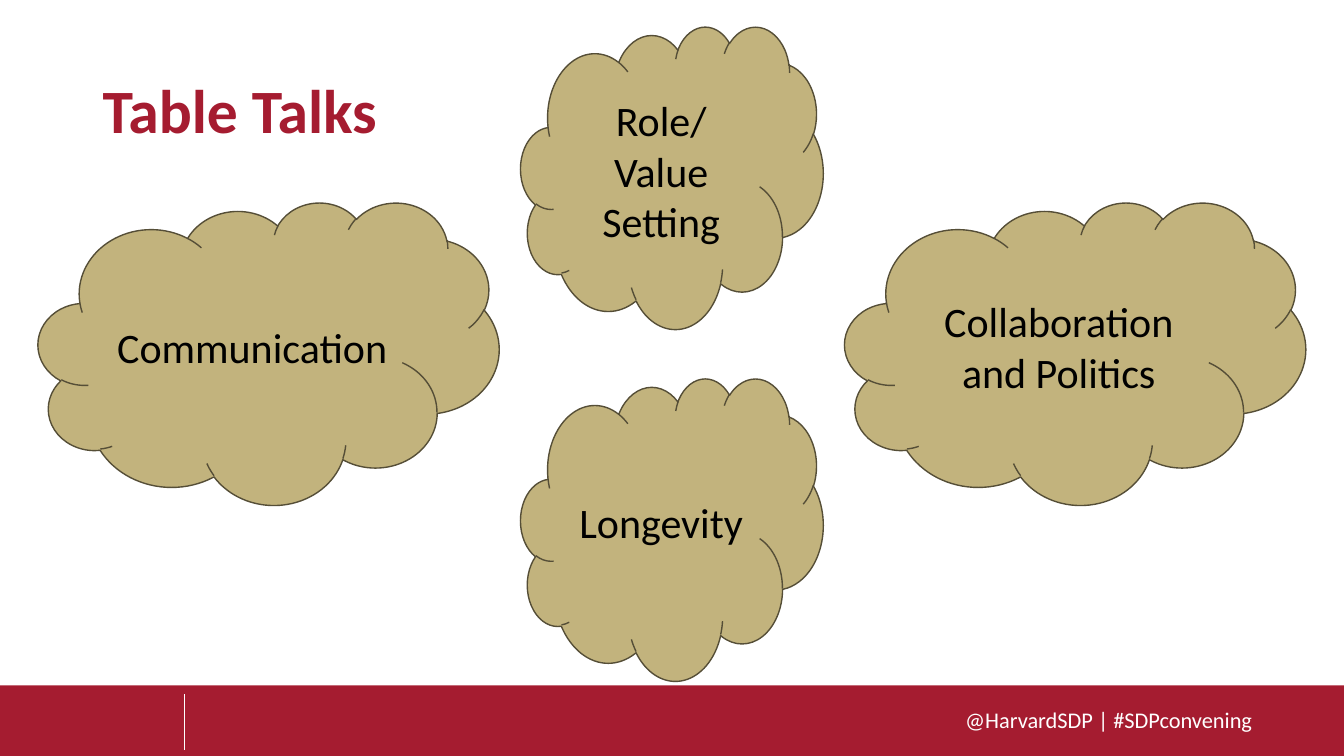
from dataclasses import dataclass

import pptx
import pptx.dml.color
import pptx.enum.shapes
import pptx.enum.text
import pptx.oxml
import pptx.oxml.ns
import pptx.util

Inches = pptx.util.Inches
Pt = pptx.util.Pt
RGBColor = pptx.dml.color.RGBColor
MSO_SHAPE = pptx.enum.shapes.MSO_SHAPE
MSO_CONNECTOR = pptx.enum.shapes.MSO_CONNECTOR
MSO_ANCHOR = pptx.enum.text.MSO_ANCHOR
PP_ALIGN = pptx.enum.text.PP_ALIGN


@dataclass(frozen=True)
class Theme:
    font: str = "Calibri"
    crimson: RGBColor = RGBColor(0xA5, 0x1C, 0x30)
    white: RGBColor = RGBColor(0xFF, 0xFF, 0xFF)
    black: RGBColor = RGBColor(0, 0, 0)
    sand: RGBColor = RGBColor(0xC2, 0xB3, 0x7D)
    outline: RGBColor = RGBColor(0x55, 0x4E, 0x37)
    title_size: int = 44
    cloud_size: int = 30
    footer_size: int = 16


THEME = Theme()
SLIDE_W, SLIDE_H = 13.33, 7.5


def write(shape, lines, size, color, align, bold=False):
    """Put one paragraph per line into the shape, vertically centred."""
    tf = shape.text_frame
    tf.word_wrap = True
    tf.vertical_anchor = MSO_ANCHOR.MIDDLE
    tf.text = "\n".join(lines)
    for p in tf.paragraphs:
        p.alignment = align
        for r in p.runs:
            r.font.name = THEME.font
            r.font.size = Pt(size)
            r.font.bold = bold
            r.font.color.rgb = color


def add_footer(slide, left, top, width, height):
    band = slide.shapes.add_shape(
        MSO_SHAPE.RECTANGLE, Inches(left), Inches(top), Inches(width), Inches(height))
    band.shadow.inherit = False
    band.fill.solid()
    band.fill.fore_color.rgb = THEME.crimson
    band.line.fill.background()

    tags = slide.shapes.add_textbox(
        Inches(left + 8.39), Inches(top + 0.15), Inches(4.03), Inches(0.37))
    tags.text_frame.margin_right = 0
    write(tags, ["@HarvardSDP | #SDPconvening"], THEME.footer_size, THEME.white, PP_ALIGN.RIGHT)

    divider_x = Inches(left + 1.83)
    divider = slide.shapes.add_connector(
        MSO_CONNECTOR.STRAIGHT, divider_x, Inches(top + 0.09), divider_x, Inches(top + 0.64))
    divider.line.color.rgb = THEME.white
    divider.line.width = Pt(0.5)
    effects = pptx.oxml.parse_xml(f"<a:effectLst {pptx.oxml.ns.nsdecls('a')}/>")
    divider._element.spPr.append(effects)


def add_title(slide, left, top, width, height, text):
    title = slide.shapes.add_textbox(Inches(left), Inches(top), Inches(width), Inches(height))
    write(title, [text], THEME.title_size, THEME.crimson, PP_ALIGN.LEFT, bold=True)
    title.text_frame.paragraphs[0].line_spacing = 0.9


def add_cloud(slide, left, top, width, height, lines):
    cloud = slide.shapes.add_shape(
        MSO_SHAPE.CLOUD, Inches(left), Inches(top), Inches(width), Inches(height))
    cloud.shadow.inherit = False
    cloud.fill.solid()
    cloud.fill.fore_color.rgb = THEME.sand
    cloud.line.color.rgb = THEME.outline
    cloud.line.width = Pt(1)
    write(cloud, lines, THEME.cloud_size, THEME.black, PP_ALIGN.CENTER)


def add_topic_clouds(slide, left, top, width, height):
    """Narrow clouds above and below the centre, wide ones at either side."""
    size, wide = 3, 4.57
    center_x = left + (width - size) / 2
    middle_y = top + (height - size) / 2
    add_cloud(slide, center_x, top + height - size, size, size, ["Longevity"])
    add_cloud(slide, center_x, top, size, size, ["Role/", "Value Setting"])
    add_cloud(slide, left, middle_y, wide, size, ["Communication"])
    add_cloud(slide, left + width - wide, middle_y, wide, size, ["Collaboration and Politics"])


def main():
    prs = pptx.Presentation()
    prs.slide_width, prs.slide_height = Inches(SLIDE_W), Inches(SLIDE_H)
    slide = prs.slides.add_slide(prs.slide_layouts[6])
    add_footer(slide, 0, 6.8, SLIDE_W, SLIDE_H - 6.8)
    add_title(slide, 0.92, 0.4, 11.5, 1.45, "Table Talks")
    add_topic_clouds(slide, 0.38, 0.26, 12.57, 6.49)
    prs.save("out.pptx")


if __name__ == "__main__":
    main()
